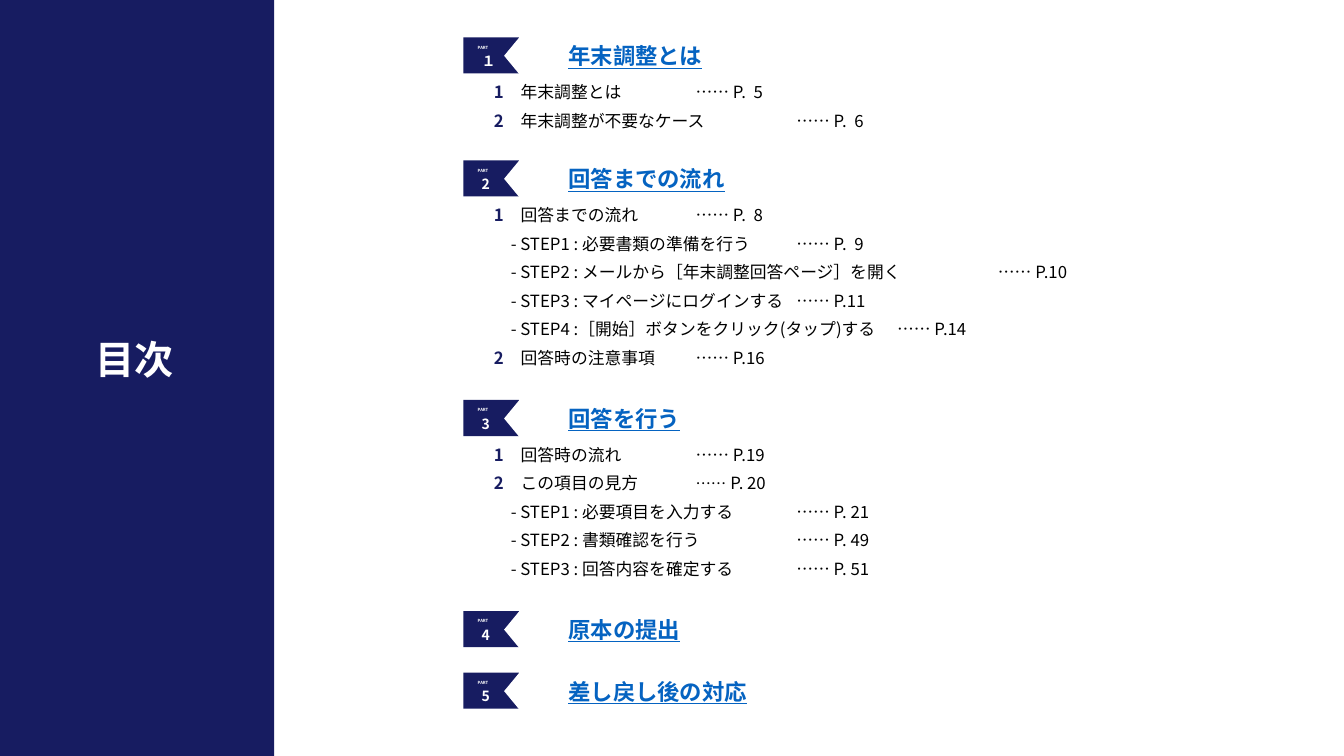
import dataclasses
import typing

import lxml.etree
import pptx
import pptx.dml.color
import pptx.enum.shapes
import pptx.enum.text
import pptx.oxml.ns
import pptx.util

Cm = pptx.util.Cm
Pt = pptx.util.Pt
Shape = pptx.enum.shapes.MSO_SHAPE
Anchor = pptx.enum.text.MSO_ANCHOR
qn = pptx.oxml.ns.qn

NAVY = pptx.dml.color.RGBColor(0x17, 0x1C, 0x61)
WHITE = pptx.dml.color.RGBColor(0xFF, 0xFF, 0xFF)
BLACK = pptx.dml.color.RGBColor(0x00, 0x00, 0x00)
LINK_BLUE = pptx.dml.color.RGBColor(0x05, 0x63, 0xC1)
FONT = "Noto Sans CJK JP"
TAB_STEP = 2.54
LINE_FACTOR = 1.2


@dataclasses.dataclass(frozen=True)
class Entry:
    number: str
    label: str
    page_number: str
    dots_size: float = 12


@dataclasses.dataclass(frozen=True)
class Section:
    number: str
    heading: str
    top: float
    entries: tuple[Entry, ...] = ()


SECTIONS = (
    Section("１", "年末調整とは", 0.94, (
        Entry("1", "年末調整とは", "P.  5"),
        Entry("2", "年末調整が不要なケース", "P.  6"),
    )),
    Section("2", "回答までの流れ", 4.04, (
        Entry("1", "回答までの流れ", "P.  8"),
        Entry("", "- STEP1 : 必要書類の準備を行う", "P.  9"),
        Entry("", "- STEP2 : メールから［年末調整回答ページ］を開く", "P.10"),
        Entry("", "- STEP3 : マイページにログインする", "P.11"),
        Entry("", "- STEP4 :［開始］ボタンをクリック(タップ)する", "P.14"),
        Entry("2", "回答時の注意事項", "P.16"),
    )),
    Section("3", "回答を行う", 10.08, (
        Entry("1", "回答時の流れ", "P.19"),
        Entry("2", "この項目の見方", "P. 20", 11),
        Entry("", "- STEP1 : 必要項目を入力する", "P. 21"),
        Entry("", "- STEP2 : 書類確認を行う", "P. 49"),
        Entry("", "- STEP3 : 回答内容を確定する", "P. 51"),
    )),
    Section("4", "原本の提出", 15.4),
    Section("5", "差し戻し後の対応", 16.95),
)


def format_span(span: typing.Any, size: float, color: typing.Any,
                bold: bool = True, underline: bool = False) -> None:
    span.font.size = Pt(size)
    span.font.bold = bold
    if underline:
        span.font.underline = True
    span.font.color.rgb = color
    span.font.name = FONT
    east_asian = lxml.etree.SubElement(span.font._element, qn("a:ea"))
    east_asian.set("typeface", FONT)


def set_frame(frame: typing.Any, margins: tuple[float, float],
              anchor: typing.Any = Anchor.TOP, wrap: bool = False) -> None:
    frame.margin_left = frame.margin_right = Cm(margins[0])
    frame.margin_top = frame.margin_bottom = Cm(margins[1])
    frame.vertical_anchor = anchor
    frame.word_wrap = wrap
    frame.auto_size = pptx.enum.text.MSO_AUTO_SIZE.NONE


def add_block(shapes: typing.Any, kind: typing.Any, left: float, top: float,
              width: float, height: float, color: typing.Any) -> typing.Any:
    block = shapes.add_shape(kind, Cm(left), Cm(top), Cm(width), Cm(height))
    block.shadow.inherit = False
    block.fill.solid()
    block.fill.fore_color.rgb = color
    block.line.fill.background()
    return block


def add_label(shapes: typing.Any, text: str, left: float, top: float,
              width: float, height: float, size: float,
              margins: tuple[float, float] = (0, 0)) -> None:
    box = shapes.add_textbox(Cm(left), Cm(top), Cm(width), Cm(height))
    set_frame(box.text_frame, margins)
    box.text_frame.text = text
    para = box.text_frame.paragraphs[0]
    para.line_spacing = Pt(size * LINE_FACTOR)
    format_span(para.runs[0], size, WHITE)


def add_badge(shapes: typing.Any, section: Section) -> None:
    add_block(shapes, Shape.RECTANGLE, 11.68, section.top, 1.4, 0.91, NAVY)
    add_label(shapes, "PART", 11.79, section.top + 0.06, 1.07, 0.38, 3, (0.25, 0.13))
    add_label(shapes, section.number, 12.14, section.top + 0.38, 0.36, 0.43, 10)
    notch = add_block(shapes, Shape.ISOSCELES_TRIANGLE,
                      12.4, section.top + 0.25, 1.04, 0.43, WHITE)
    notch.rotation = 270


def add_heading(shapes: typing.Any, section: Section) -> None:
    box = shapes.add_textbox(Cm(13.69), Cm(section.top + 0.12), Cm(7.82), Cm(0.69))
    set_frame(box.text_frame, (0, 0), Anchor.MIDDLE)
    box.text_frame.text = section.heading
    para = box.text_frame.paragraphs[0]
    box.text_frame.margin_left = Cm(0.1)
    box.left = Cm(13.69)
    box.text_frame.margin_left = Cm(TAB_STEP / 4)
    format_span(para.runs[0], 16, LINK_BLUE, underline=True)


def add_tabs(para: typing.Any) -> None:
    tabs = lxml.etree.SubElement(para._p.get_or_add_pPr(), qn("a:tabLst"))
    for step in range(2, 6):
        tab = lxml.etree.SubElement(tabs, qn("a:tab"))
        tab.set("pos", str(int(Cm(TAB_STEP * step))))
        tab.set("algn", "l")


def add_entries(shapes: typing.Any, section: Section) -> None:
    box = shapes.add_textbox(Cm(12.45), Cm(section.top + 1.12), Cm(15.62),
                             Cm(0.72 * len(section.entries)))
    frame = box.text_frame
    set_frame(frame, (0, 0), wrap=True)
    for index, entry in enumerate(section.entries):
        para = frame.add_paragraph() if index else frame.paragraphs[0]
        para.line_spacing = Pt(12 * LINE_FACTOR)
        para.space_after = Pt(6)
        add_tabs(para)
        parts = (
            (entry.number + "　", 12, NAVY, True),
            (entry.label, 12, BLACK, False),
            ("\t……", entry.dots_size, BLACK, False),
            (" " + entry.page_number, 12, BLACK, False),
        )
        for text, size, color, bold in parts:
            span = para.add_run()
            span.text = text
            format_span(span, size, color, bold)


def add_title(page: typing.Any) -> None:
    title = page.shapes.title
    title.left, title.top = Cm(2.16), Cm(8.31)
    title.width, title.height = Cm(2.57), Cm(1.45)
    set_frame(title.text_frame, (0.25, 0.13), Anchor.MIDDLE)
    title.text_frame.text = "目次"
    para = title.text_frame.paragraphs[0]
    para.alignment = pptx.enum.text.PP_ALIGN.LEFT
    format_span(para.runs[0], 28, WHITE)
    sidebar = add_block(page.shapes, Shape.RECTANGLE, 0, 0, 6.91, 19.05, NAVY)
    title.element.addprevious(sidebar.element)


def main() -> None:
    deck = pptx.Presentation()
    deck.slide_width, deck.slide_height = Cm(33.87), Cm(19.05)
    page = deck.slides.add_slide(deck.slide_layouts[5])
    add_title(page)
    for section in SECTIONS:
        shapes = page.shapes.add_group_shape().shapes
        add_badge(shapes, section)
        add_heading(shapes, section)
        if section.entries:
            add_entries(shapes, section)
    deck.save("out.pptx")


if __name__ == "__main__":
    main()
